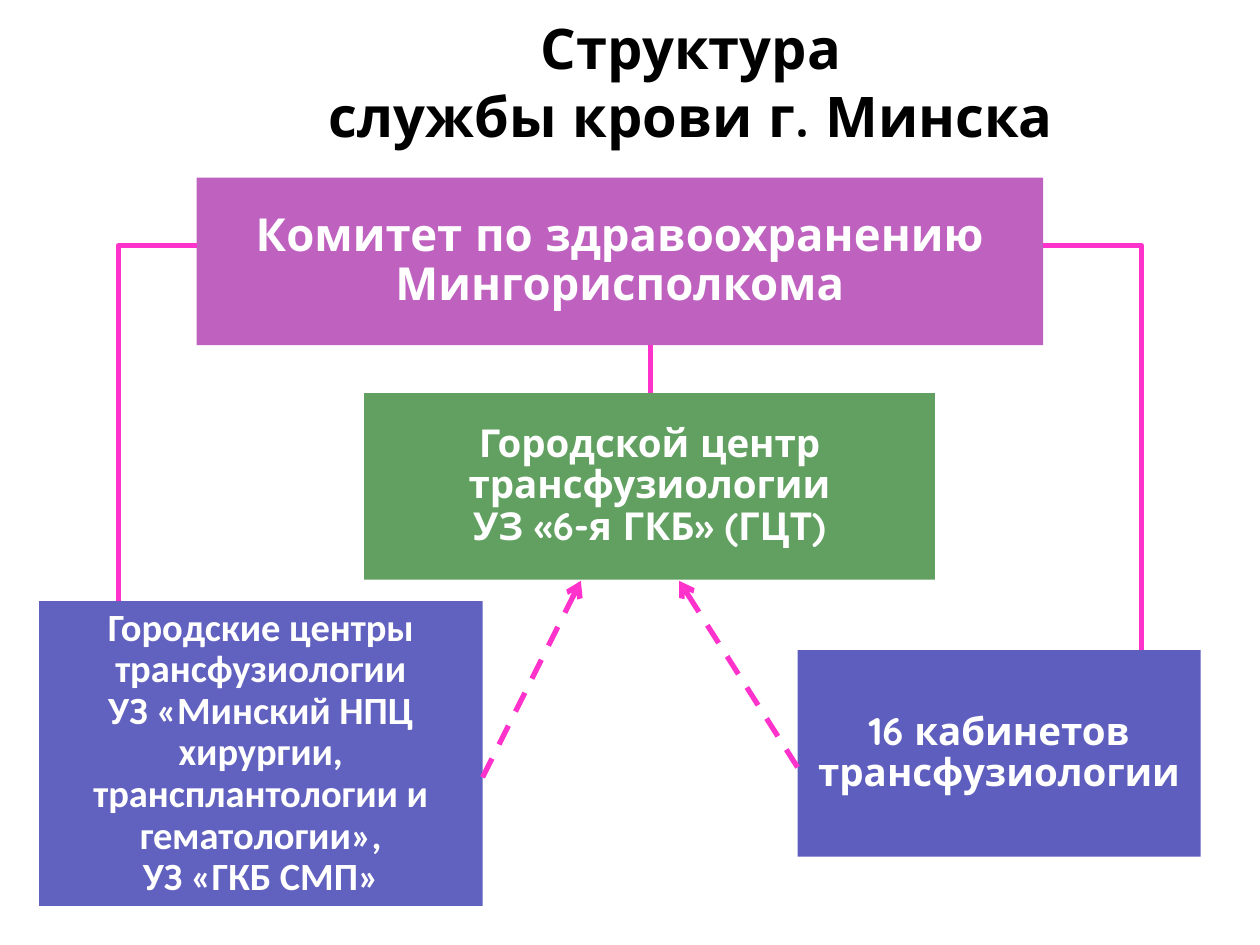
import pptx
import pptx.dml.color
import pptx.enum.dml
import pptx.enum.shapes
import pptx.enum.text
import pptx.oxml.ns
import pptx.util
from lxml import etree

Inches = pptx.util.Inches
Connector = pptx.enum.shapes.MSO_CONNECTOR
Anchor = pptx.enum.text.MSO_ANCHOR
qn = pptx.oxml.ns.qn

PINK = "FF33CC"
PURPLE = "990099"
BLUE = "000099"
GREEN = "006600"


def color(hex_text):
    return pptx.dml.color.RGBColor.from_string(hex_text)


def write_text(frame, lines, size, font="Quicksand", ink="FFFFFF",
               spacing=0.9, anchor=Anchor.MIDDLE):
    frame.word_wrap = True
    frame.auto_size = pptx.enum.text.MSO_AUTO_SIZE.NONE
    frame.vertical_anchor = anchor
    for index, line in enumerate(lines):
        para = frame.add_paragraph() if index else frame.paragraphs[0]
        para.alignment = pptx.enum.text.PP_ALIGN.CENTER
        para.line_spacing = spacing
        span = para.add_run()
        span.text = line
        span.font.name = font
        span.font.size = pptx.util.Pt(size)
        span.font.bold = True
        span.font.color.rgb = color(ink)


def set_title(page, lines):
    title = page.shapes.title
    title.left, title.top = Inches(1.8), Inches(0)
    title.width, title.height = Inches(7.12), Inches(1.25)
    frame = title.text_frame
    frame.margin_left = Inches(0.35)
    frame.margin_right = Inches(0.1)
    frame.margin_top = Inches(0.11)
    write_text(frame, lines, 32, ink="000000", spacing=1.0, anchor=Anchor.TOP)


def add_unit(page, place, fill, lines, size=22, opacity=62, font="Quicksand"):
    box = page.shapes.add_shape(pptx.enum.shapes.MSO_SHAPE.RECTANGLE,
                                *[Inches(value) for value in place])
    box.shadow.inherit = False
    box.fill.solid()
    box.fill.fore_color.rgb = color(fill)
    tint = next(box.element.spPr.iter(qn("a:srgbClr")))
    etree.SubElement(tint, qn("a:alpha"), val=str(opacity * 1000))
    box.line.fill.background()
    write_text(box.text_frame, lines, size, font)


def add_link(page, start, end, elbow=False, dashed_arrow=False):
    kind = Connector.ELBOW if elbow else Connector.STRAIGHT
    link = page.shapes.add_connector(
        kind, *[Inches(value) for value in start + end])
    link.line.color.rgb = color(PINK)
    link.line.width = pptx.util.Pt(3)
    properties = link.element.spPr
    if elbow:
        properties.find(qn("a:prstGeom")).set("prst", "bentConnector2")
    if dashed_arrow:
        link.line.dash_style = pptx.enum.dml.MSO_LINE.DASH
        etree.SubElement(properties.find(qn("a:ln")), qn("a:tailEnd"),
                         type="arrow")
    etree.SubElement(properties, qn("a:effectLst"))


def main():
    deck = pptx.Presentation()
    deck.slide_width, deck.slide_height = Inches(10), Inches(7.5)
    page = deck.slides.add_slide(deck.slide_layouts[5])

    add_unit(page, (1.56, 1.41, 6.72, 1.33), PURPLE,
             ["Комитет по здравоохранению Мингорисполкома"], size=26)
    add_unit(page, (0.31, 4.77, 3.52, 2.42), BLUE,
             ["Городские центры трансфузиологии",
              "УЗ «Минский НПЦ хирургии, трансплантологии и гематологии»,",
              "УЗ «ГКБ СМП»"], font="Calibri")
    add_unit(page, (2.89, 3.12, 4.53, 1.48), GREEN,
             ["Городской центр трансфузиологии", "УЗ «6-я ГКБ» (ГЦТ)"])
    add_unit(page, (6.33, 5.16, 3.2, 1.64), BLUE,
             ["16 кабинетов трансфузиологии"], opacity=63)

    add_link(page, (3.83, 6.17), (4.61, 4.61), dashed_arrow=True)
    add_link(page, (6.33, 6.09), (5.39, 4.61), dashed_arrow=True)
    add_link(page, (5.16, 2.74), (5.16, 3.12))
    for inner, outer, bottom in ((1.56, 0.94, 4.77), (8.28, 9.06, 5.16)):
        add_link(page, (inner, 1.95), (outer, 3.12), elbow=True)
        add_link(page, (outer, 3.12), (outer, bottom))

    set_title(page, ["Структура", "службы крови г. Минска"])
    deck.save("out.pptx")


if __name__ == "__main__":
    main()
